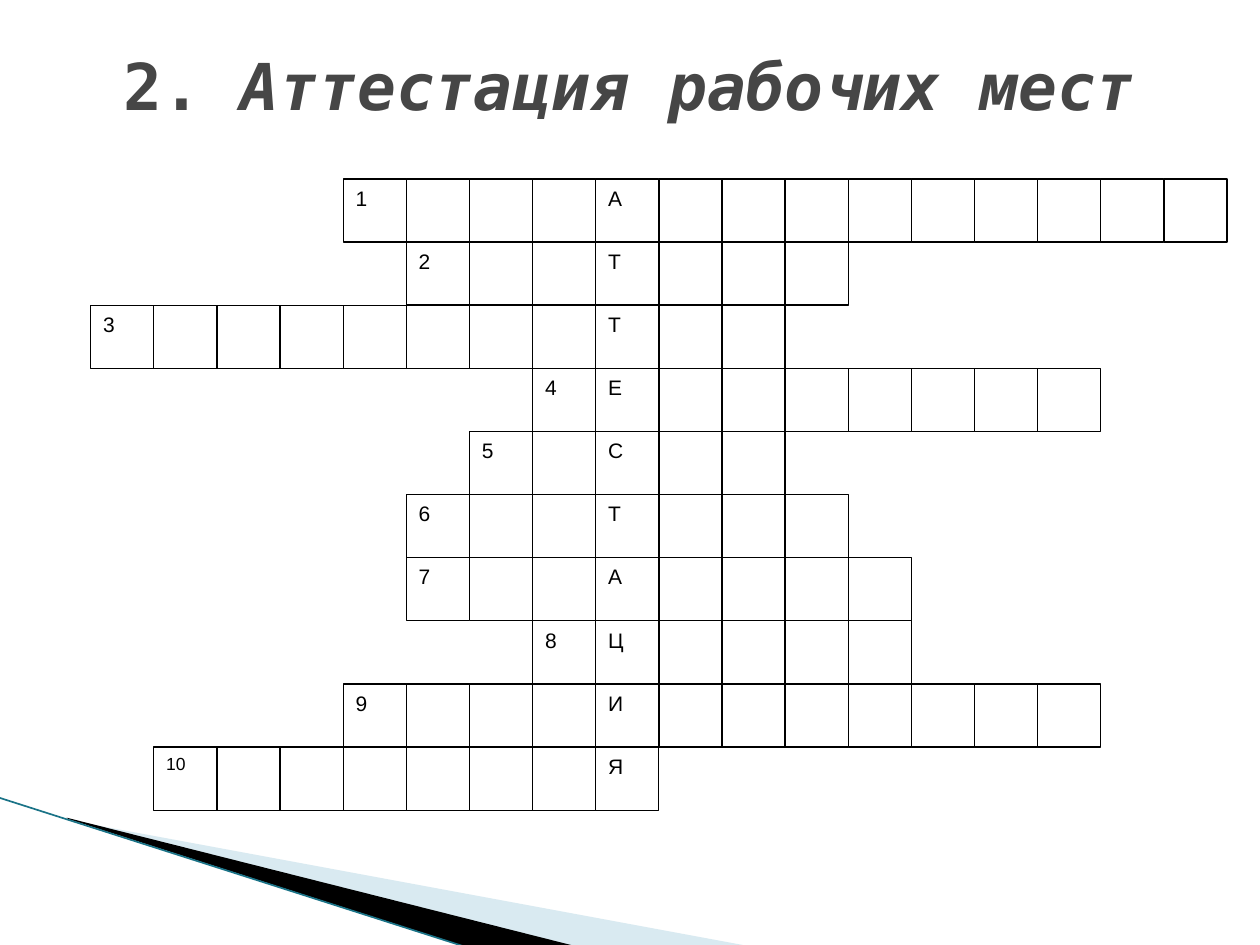
from lxml import etree
from pptx import Presentation
from pptx.dml.color import RGBColor
from pptx.enum.shapes import MSO_CONNECTOR, MSO_SHAPE
from pptx.enum.text import MSO_ANCHOR, PP_ALIGN
from pptx.oxml.ns import qn
from pptx.util import Inches, Pt

RECTANGLE = MSO_SHAPE.RECTANGLE
STRAIGHT = MSO_CONNECTOR.STRAIGHT
TOP, MIDDLE = MSO_ANCHOR.TOP, MSO_ANCHOR.MIDDLE
LEFT, CENTER = PP_ALIGN.LEFT, PP_ALIGN.CENTER

COLORS = {
    "title": "464646",
    "ink": "000000",
    "cell": "FFFFFF",
    "pale": "A0CBDC",
    "teal": "1A7387",
}

# Title runs: text, italic
TITLE = [("2. ", False), ("Аттестация рабочих мест", True)]

# Crossword rows: first column, number of cells
KEYWORD = "АТТЕСТАЦИЯ"
WORDS = [(4, 14), (5, 7), (0, 11), (7, 9), (6, 5),
         (5, 7), (5, 8), (7, 6), (4, 12), (1, 8)]
KEY_COLUMN = 8
GRID_LEFT, GRID_TOP, CELL = 0.72, 1.42, 0.501

# Corner wedges: points, fill, opacity in percent
WEDGES = [
    ([(0.55, 6.51), (5.95, 7.51), (4.56, 7.51), (0.55, 6.5)], "pale", 40),
    ([(0.53, 6.49), (4.57, 7.51), (3.72, 7.52), (0.54, 6.5)], "ink", 100),
]
CORNER_LINE = [(-0.01, 6.33), (3.71, 7.52)]


def color(name):
    return RGBColor.from_string(COLORS[name])


def fill_shape(shape, name):
    shape.shadow.inherit = False
    shape.fill.solid()
    shape.fill.fore_color.rgb = color(name)


def add_run(paragraph, text, font_name, size, color_name):
    run = paragraph.add_run()
    run.text = text
    run.font.name = font_name
    run.font.size = Pt(size)
    run.font.color.rgb = color(color_name)
    return run


def add_wedge(slide, points, name, opacity):
    corners = [(Inches(x), Inches(y)) for x, y in points]
    builder = slide.shapes.build_freeform(*corners[0])
    builder.add_line_segments(corners[1:], close=True)
    shape = builder.convert_to_shape()
    fill_shape(shape, name)
    shape.line.fill.background()
    if opacity < 100:
        fill_color = shape._element.spPr.find(qn("a:solidFill"))[0]
        etree.SubElement(fill_color, qn("a:alpha"), val=str(opacity * 1000))


def add_cell(group, row, column, label):
    shape = group.shapes.add_shape(
        RECTANGLE, Inches(GRID_LEFT + column * CELL),
        Inches(GRID_TOP + row * CELL), Inches(CELL), Inches(CELL))
    fill_shape(shape, "cell")
    shape.line.color.rgb = color("ink")
    shape.line.width = Pt(0.75)
    if label:
        shape.text_frame.vertical_anchor = TOP
        paragraph = shape.text_frame.paragraphs[0]
        paragraph.alignment = LEFT
        add_run(paragraph, label, "Arial", 12 if len(label) == 1 else 10, "ink")


presentation = Presentation()
presentation.slide_width, presentation.slide_height = Inches(10), Inches(7.5)
slide = presentation.slides.add_slide(presentation.slide_layouts[6])

# Corner decoration
for points, name, opacity in WEDGES:
    add_wedge(slide, points, name, opacity)
ends = [Inches(value) for point in CORNER_LINE for value in point]
connector = slide.shapes.add_connector(STRAIGHT, *ends)
connector.line.color.rgb = color("teal")
connector.line.width = Pt(0.95)
etree.SubElement(connector._element.spPr, qn("a:effectLst"))

# Title
title = slide.shapes.add_textbox(Inches(0.5), Inches(0.33), Inches(9), Inches(0.69))
title.text_frame.word_wrap = True
title.text_frame.vertical_anchor = MIDDLE
paragraph = title.text_frame.paragraphs[0]
paragraph.alignment = CENTER
for text, italic in TITLE:
    run = add_run(paragraph, text, "DejaVu Sans Mono", 36.9, "title")
    run.font.bold = True
    run.font.italic = italic

# Crossword
crossword = slide.shapes.add_group_shape()
for row, (first, count) in enumerate(WORDS):
    labels = {first: str(row + 1), KEY_COLUMN: KEYWORD[row]}
    for column in range(first, first + count):
        add_cell(crossword, row, column, labels.get(column))

presentation.save("out.pptx")
